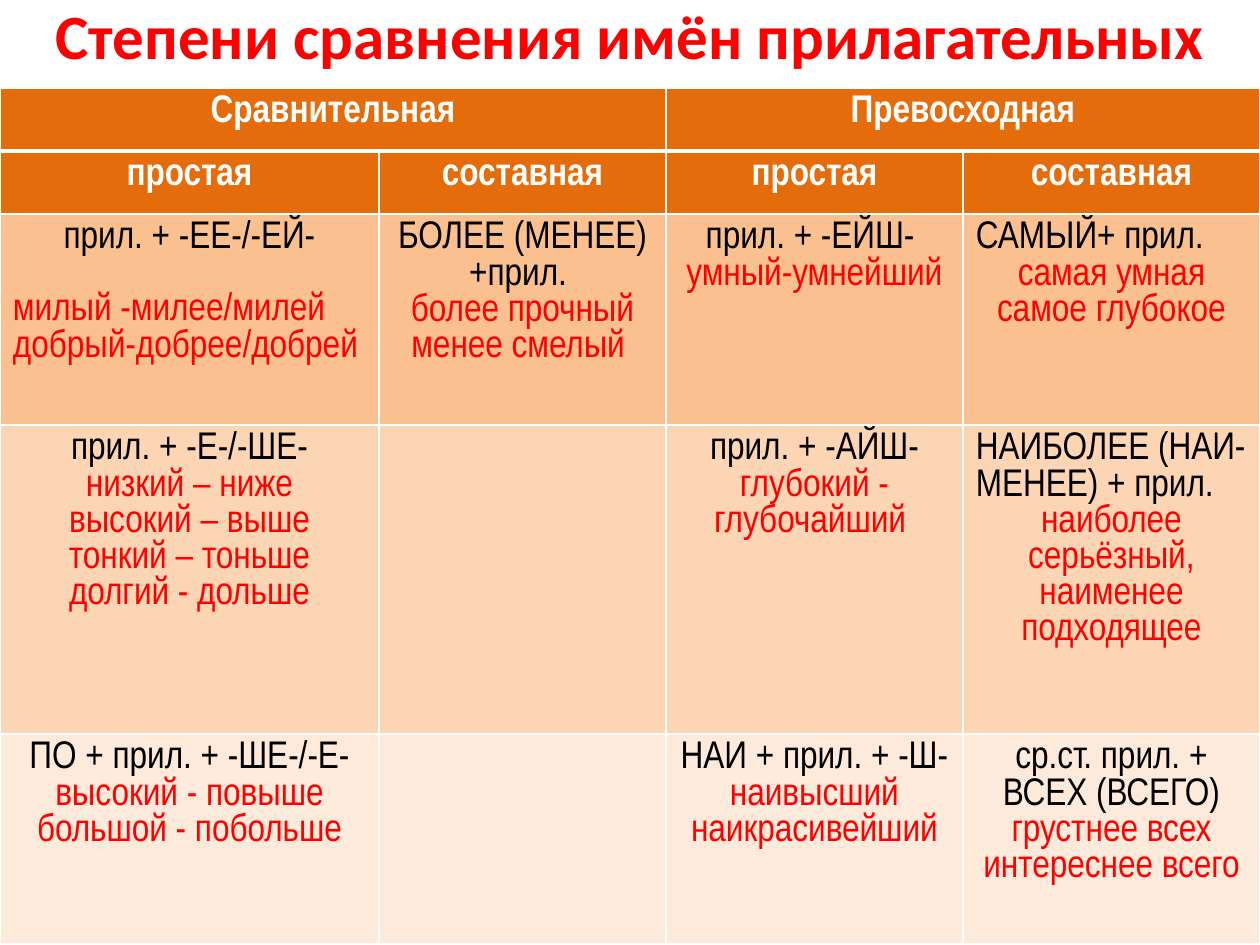
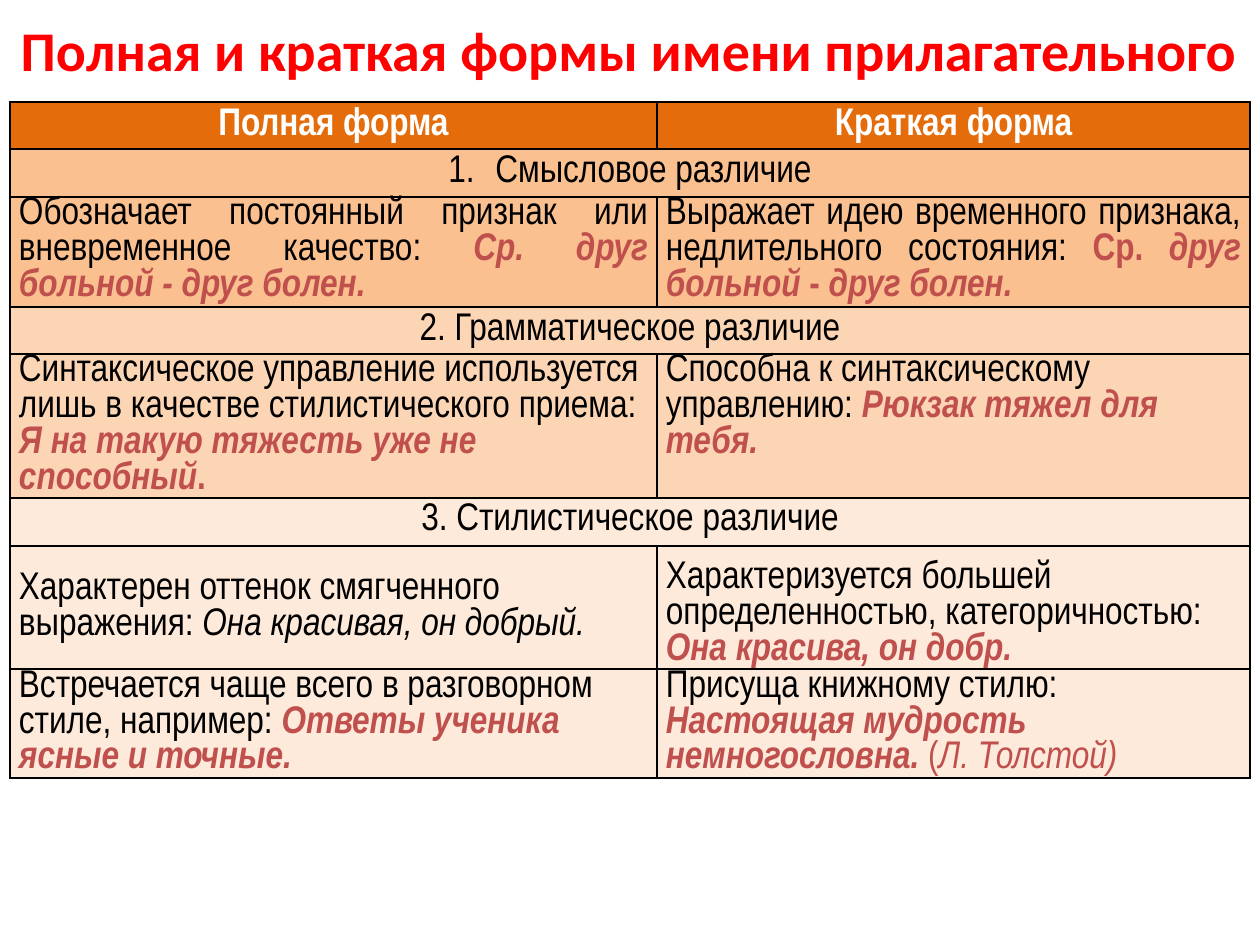
from dataclasses import dataclass
from typing import NamedTuple

from lxml.etree import SubElement
from pptx import Presentation
from pptx.dml.color import RGBColor
from pptx.enum.lang import MSO_LANGUAGE_ID
from pptx.enum.text import MSO_ANCHOR, PP_ALIGN
from pptx.oxml.ns import qn
from pptx.util import Emu, Pt

EMU_PER_PX = 914400 / 126


@dataclass(frozen=True)
class Theme:
    red: str = "FF0000"
    accent: str = "C0504D"
    black: str = "000000"
    white: str = "FFFFFF"
    header: str = "E46C0A"
    dark: str = "FAC090"
    medium: str = "FCD5B5"
    light: str = "FDEADA"
    title_font: str = "Calibri"
    body_font: str = "Arial Narrow"
    body_size: int = 22
    tight_leading: float = 20.5
    loose_leading: float = 23.6
    border: int = 1
    heavy_border: int = 3


THEME = Theme()


class Run(NamedTuple):
    text: str
    color: str = THEME.black
    bold: bool = False
    italic: bool = False


class Line(NamedTuple):
    """A paragraph; a leading of 0 keeps the natural line height."""
    runs: tuple[Run, ...]
    align: PP_ALIGN = PP_ALIGN.CENTER
    leading: float = 0
    space_before: float = 0
    numbered: bool = False


class CellContent(NamedTuple):
    lines: tuple[Line, ...] = ()
    span: int = 1
    anchor: MSO_ANCHOR = MSO_ANCHOR.TOP


class Row(NamedTuple):
    height: int
    fill: str
    cells: tuple[CellContent, ...]
    heavy_top: bool = False
    heavy_bottom: bool = False


class TableSpec(NamedTuple):
    left: int
    top: int
    columns: tuple[int, ...]
    rows: tuple[Row, ...]
    border_color: str
    margins: tuple[int, int]


class TitleSpec(NamedTuple):
    text: str
    left: int
    top: int
    width: int
    height: int
    size: int


def px(length: int) -> Emu:
    return Emu(round(length * EMU_PER_PX))


def add_text(paragraph, text: str, *, size: int = THEME.body_size,
             font: str = THEME.body_font, color: str = THEME.black,
             bold: bool = False, italic: bool = False) -> None:
    run = paragraph.add_run()
    run.text = text
    run.font.size = Pt(size)
    run.font.name = font
    run.font.bold = bold
    run.font.italic = italic
    run.font.language_id = MSO_LANGUAGE_ID.RUSSIAN
    run.font.color.rgb = RGBColor.from_string(color)


def add_title(slide, title: TitleSpec) -> None:
    box = slide.shapes.add_textbox(px(title.left), px(title.top), px(title.width), px(title.height))
    frame = box.text_frame
    frame.word_wrap = True
    frame.vertical_anchor = MSO_ANCHOR.MIDDLE
    frame.margin_left = frame.margin_right = 0
    paragraph = frame.paragraphs[0]
    paragraph.alignment = PP_ALIGN.CENTER
    add_text(paragraph, title.text, size=title.size, font=THEME.title_font,
             color=THEME.red, bold=True)


def number_paragraph(paragraph, indent: int) -> None:
    properties = paragraph._p.get_or_add_pPr()
    properties.set("marL", str(indent))
    properties.set("indent", str(-indent))
    SubElement(properties, qn("a:buFont"), typeface="+mj-lt")
    SubElement(properties, qn("a:buAutoNum"), type="arabicPeriod")


def write_lines(frame, lines: tuple[Line, ...]) -> None:
    for index, line in enumerate(lines):
        paragraph = frame.add_paragraph() if index else frame.paragraphs[0]
        paragraph.alignment = line.align
        if line.leading:
            paragraph.line_spacing = Pt(line.leading)
        if line.space_before:
            paragraph.space_before = Pt(line.space_before)
        if line.numbered:
            number_paragraph(paragraph, px(47))
        for run in line.runs:
            add_text(paragraph, run.text, color=run.color, bold=run.bold, italic=run.italic)


def style_cell(cell, row: Row, border_color: str) -> None:
    """Borders go before the fill, as the cell properties require."""
    properties = cell._tc.get_or_add_tcPr()
    heavy = {"T": row.heavy_top, "B": row.heavy_bottom}
    for side in "LRTB":
        width = THEME.heavy_border if heavy.get(side) else THEME.border
        border = SubElement(properties, qn(f"a:ln{side}"), w=str(Pt(width)))
        SubElement(SubElement(border, qn("a:solidFill")), qn("a:srgbClr"), val=border_color)
    cell.fill.solid()
    cell.fill.fore_color.rgb = RGBColor.from_string(row.fill)


def add_table(slide, spec: TableSpec) -> None:
    table = slide.shapes.add_table(
        len(spec.rows), len(spec.columns), px(spec.left), px(spec.top),
        px(sum(spec.columns)), px(sum(row.height for row in spec.rows))).table
    table.first_row = table.horz_banding = False
    for column, width in zip(table.columns, spec.columns):
        column.width = px(width)
    side_margin, top_margin = spec.margins
    for row_index, row in enumerate(spec.rows):
        table.rows[row_index].height = px(row.height)
        for cell in table.rows[row_index].cells:
            style_cell(cell, row, spec.border_color)
            cell.margin_left = cell.margin_right = px(side_margin)
            cell.margin_top = cell.margin_bottom = px(top_margin)
        column_index = 0
        for content in row.cells:
            cell = table.cell(row_index, column_index)
            if content.span > 1:
                cell.merge(table.cell(row_index, column_index + content.span - 1))
            cell.vertical_anchor = content.anchor
            write_lines(cell.text_frame, content.lines)
            column_index += content.span


def heading(text: str, span: int = 1, leading: float = 0) -> CellContent:
    return CellContent((Line((Run(text, THEME.white, bold=True),), leading=leading),), span)


def pattern(rule: str, *examples: str, rule_align: PP_ALIGN = PP_ALIGN.CENTER,
            example_align: PP_ALIGN = PP_ALIGN.CENTER, gap: float = 0) -> CellContent:
    """A formation rule in black above its examples in red."""
    lines = [Line((Run(rule),), rule_align)]
    for index, text in enumerate(examples):
        lines.append(Line((Run(text, THEME.red),), example_align,
                          space_before=0 if index else gap))
    return CellContent(tuple(lines))


def section(text: str, numbered: bool = False) -> CellContent:
    return CellContent((Line((Run(text),), leading=THEME.loose_leading, numbered=numbered),),
                       span=2)


def example(text: str, bold: bool = True, italic: bool = True) -> Run:
    return Run(text, THEME.accent, bold, italic)


def statement(text: str, *examples: Run, align: PP_ALIGN = PP_ALIGN.LEFT,
              anchor: MSO_ANCHOR = MSO_ANCHOR.TOP) -> CellContent:
    return CellContent((Line((Run(text), *examples), align, THEME.tight_leading),),
                       anchor=anchor)


DEGREES_TITLE = TitleSpec("Степени сравнения имён прилагательных", 15, 0, 1230, 69, 36)
DEGREES_TABLE = TableSpec(
    left=0, top=88, columns=(379, 287, 297, 297), border_color=THEME.white, margins=(13, 7),
    rows=(
        Row(63, THEME.header, (heading("Сравнительная", 2), heading("Превосходная", 2)),
            heavy_bottom=True),
        Row(63, THEME.header, tuple(map(heading, ("простая", "составная") * 2)), heavy_top=True),
        Row(211, THEME.dark, (
            pattern("прил. + -ЕЕ-/-ЕЙ-", "милый -милее/милей", "добрый-добрее/добрей",
                    example_align=PP_ALIGN.LEFT, gap=20.5),
            pattern("БОЛЕЕ (МЕНЕЕ) +прил. ", "более прочный", "менее смелый "),
            pattern("прил. + -ЕЙШ- ", "умный-умнейший"),
            pattern("САМЫЙ+ прил.", "самая умная", "самое глубокое", rule_align=PP_ALIGN.LEFT))),
        Row(309, THEME.medium, (
            pattern("прил. + -Е-/-ШЕ-", "низкий – ниже", "высокий – выше",
                    "тонкий – тоньше", "долгий - дольше"),
            CellContent(),
            pattern("прил. + -АЙШ-", "глубокий - глубочайший "),
            pattern("НАИБОЛЕЕ (НАИ-МЕНЕЕ) + прил.", "наиболее серьёзный,",
                    "наименее подходящее", rule_align=PP_ALIGN.LEFT))),
        Row(210, THEME.light, (
            pattern("ПО + прил. + -ШЕ-/-Е-", "высокий - повыше", "большой - побольше"),
            CellContent(),
            pattern("НАИ + прил. + -Ш-", "наивысший", "наикрасивейший"),
            pattern("ср.ст. прил. + ВСЕХ (ВСЕГО)", "грустнее всех", "интереснее всего"))),
    ))

FORMS_TITLE = TitleSpec("Полная и краткая формы имени прилагательного", 4, 20, 1250, 59, 32)
FORMS_TABLE = TableSpec(
    left=10, top=102, columns=(647, 593), border_color=THEME.black, margins=(9, 0),
    rows=(
        Row(47, THEME.header, (heading("Полная форма", leading=THEME.loose_leading),
                               heading("Краткая форма", leading=THEME.loose_leading))),
        Row(48, THEME.dark, (section("Смысловое различие", numbered=True),)),
        Row(110, THEME.dark, (
            statement("Обозначает постоянный признак или вневременное качество: ",
                      example("Ср. друг больной - друг болен."), align=PP_ALIGN.JUSTIFY),
            statement("Выражает идею временного признака, недлительного состояния: ",
                      example("Ср. ", italic=False), example("друг больной"),
                      example(" - ", italic=False), example("друг болен."),
                      align=PP_ALIGN.JUSTIFY))),
        Row(47, THEME.medium, (section("2. Грамматическое различие"),)),
        Row(144, THEME.medium, (
            statement("Синтаксическое управление используется лишь в качестве "
                      "стилистического приема: ",
                      example("Я на такую тяжесть уже не способный"),
                      example(".", italic=False)),
            statement("Способна к синтаксическому управлению: ",
                      example("Рюкзак тяжел для тебя.")))),
        Row(48, THEME.light, (section("3. Стилистическое различие"),)),
        Row(123, THEME.light, (
            statement("Характерен оттенок смягченного выражения: ",
                      Run("Она красивая, он добрый.", italic=True), anchor=MSO_ANCHOR.MIDDLE),
            statement("Характеризуется большей определенностью, категоричностью: ",
                      example("Она красива, он добр."), anchor=MSO_ANCHOR.BOTTOM))),
        Row(109, THEME.light, (
            statement("Встречается чаще всего в разговорном стиле, например: ",
                      example("Ответы ученика ясные и точные."), anchor=MSO_ANCHOR.MIDDLE),
            statement("Присуща книжному стилю: ",
                      example("Настоящая мудрость немногословна. "),
                      example("(", bold=False, italic=False),
                      example("Л. Толстой)", bold=False), anchor=MSO_ANCHOR.MIDDLE))),
    ))


def main() -> None:
    presentation = Presentation()
    presentation.slide_width = px(1260)
    presentation.slide_height = px(945)
    blank_layout = presentation.slide_layouts[6]
    for title, table in ((DEGREES_TITLE, DEGREES_TABLE), (FORMS_TITLE, FORMS_TABLE)):
        slide = presentation.slides.add_slide(blank_layout)
        add_title(slide, title)
        add_table(slide, table)
    presentation.save("out.pptx")


if __name__ == "__main__":
    main()
